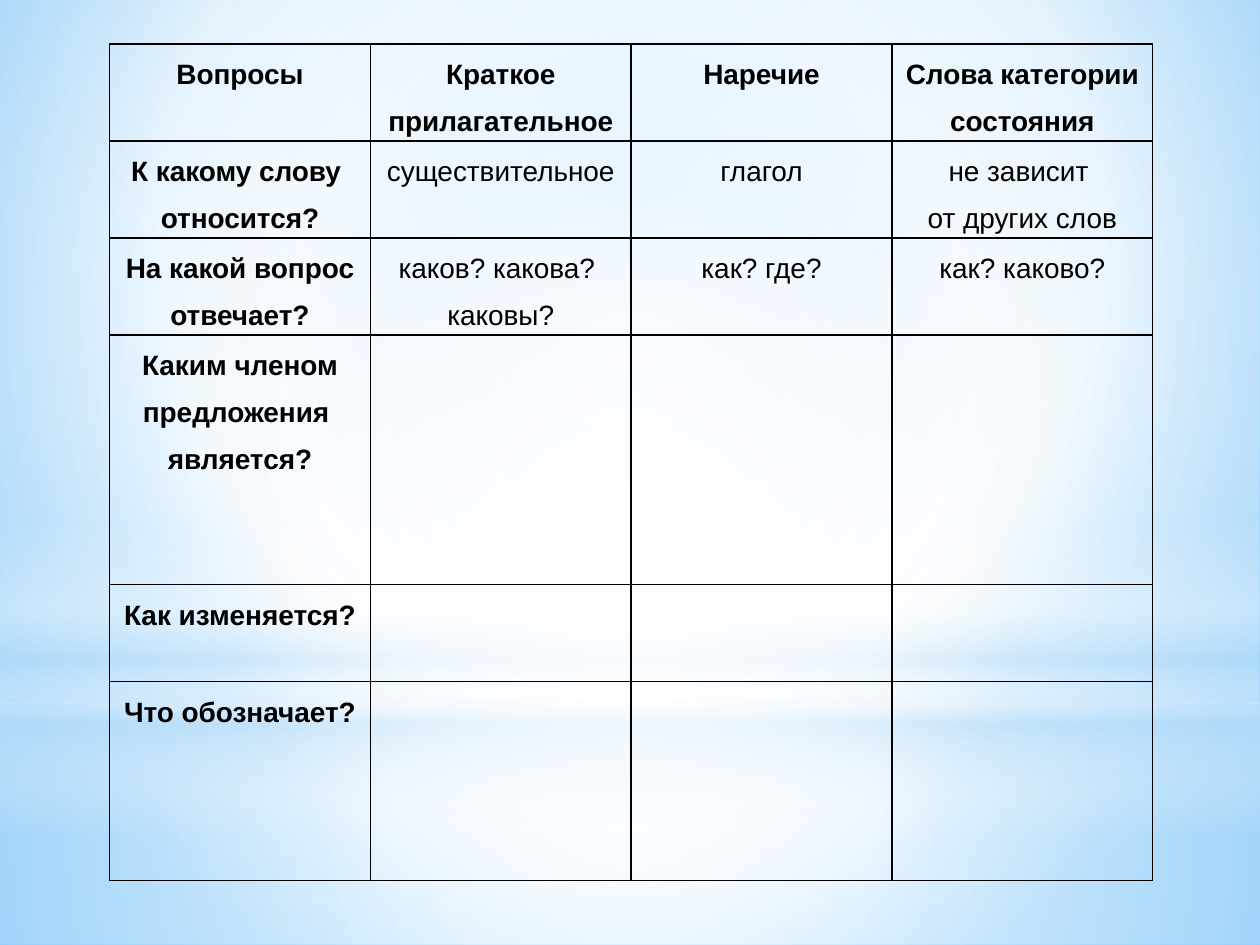
from lxml import etree
from pptx import Presentation
from pptx.dml.color import RGBColor
from pptx.enum.shapes import MSO_SHAPE
from pptx.enum.text import PP_ALIGN
from pptx.oxml.ns import qn
from pptx.util import Inches, Pt

COLORS = {
    "text": "000000", "border": "000000", "white": "FFFFFF",
    "pale": "B4DCFA", "sky": "9ED5FF", "blue": "5BB9FF",
}
CENTER = (50, 50, 50, 50)

# Gradient stops: position %, colour, opacity %
BACKGROUND = [(0, "sky", 100), (60, "white", 100), (100, "blue", 100)]
# Shape, box, stops, focus rectangle (None for a vertical linear gradient)
GLOWS = [
    (MSO_SHAPE.RECTANGLE, (0, 5.58, 10, 1.92),
     [(0, "white", 91), (37, "white", 76), (100, "pale", 79)], CENTER),
    (MSO_SHAPE.RECTANGLE, (0, 0, 10, 5.58),
     [(0, "white", 89), (48, "white", 62), (100, "pale", 79)], CENTER),
    (MSO_SHAPE.RECTANGLE, (0, 4.12, 10, 2.5),
     [(0, "white", 0), (29, "white", 30), (45, "pale", 40),
      (55, "white", 26), (65, "pale", 60), (100, "white", 0)], None),
    (MSO_SHAPE.OVAL, (0, 1.75, 10, 5.58),
     [(0, "white", 100), (56, "white", 0)], CENTER),
]

# Each cell is a list of paragraphs
ROWS = [
    [["Вопросы"], ["Краткое", "прилагательное"], ["Наречие"],
     ["Слова категории состояния"]],
    [["К какому слову ", "относится?"], ["существительное"], ["глагол"],
     ["не зависит ", "от других слов"]],
    [["На какой вопрос отвечает?"], ["каков? какова? ", "каковы?"],
     ["как? где?"], ["как? каково?"]],
    [["Каким членом предложения ", "является?"], [], [], []],
    [["Как изменяется?"], [], [], []],
    [["Что обозначает?"], [], [], []],
]
ROW_HEIGHTS = [0.77, 0.77, 0.77, 1.98, 0.77, 1.58]
COL_WIDTH = 2.07
TABLE_LEFT, TABLE_TOP = 0.87, 0.35


def set_gradient(fill, stops, focus):
    """Replace the stops and direction of a fill with the given gradient."""
    fill.gradient()
    grad = fill._fill._gradFill
    for child in list(grad):
        grad.remove(child)
    gs_list = etree.SubElement(grad, qn("a:gsLst"))
    for pos, color, opacity in stops:
        gs = etree.SubElement(gs_list, qn("a:gs"), pos=str(pos * 1000))
        clr = etree.SubElement(gs, qn("a:srgbClr"), val=COLORS[color])
        if opacity < 100:
            etree.SubElement(clr, qn("a:alpha"), val=str(opacity * 1000))
    if focus is None:
        etree.SubElement(grad, qn("a:lin"), ang="5400000", scaled="0")
        return
    shade = etree.SubElement(grad, qn("a:path"), path="circle")
    rect = {side: str(v * 1000) for side, v in zip("ltrb", focus)}
    etree.SubElement(shade, qn("a:fillToRect"), **rect)


def set_borders(cell):
    tc_pr = cell._tc.get_or_add_tcPr()
    for i, side in enumerate(("lnL", "lnR", "lnT", "lnB")):
        ln = etree.Element(qn(f"a:{side}"), w=str(Pt(1)))
        solid = etree.SubElement(ln, qn("a:solidFill"))
        etree.SubElement(solid, qn("a:srgbClr"), val=COLORS["border"])
        tc_pr.insert(i, ln)


def fill_cell(cell, paragraphs, bold):
    cell.margin_left = cell.margin_right = Inches(0.06)
    cell.margin_top = cell.margin_bottom = 0
    cell.fill.background()
    set_borders(cell)
    tf = cell.text_frame
    for i, text in enumerate(paragraphs):
        p = tf.add_paragraph() if i else tf.paragraphs[0]
        p.alignment = PP_ALIGN.CENTER
        p.line_spacing = 1.5
        r = p.add_run()
        r.text = text
        r.font.name = "Arial"
        r.font.size = Pt(16)
        r.font.bold = bold
        r.font.color.rgb = RGBColor.from_string(COLORS["text"])


def add_question_table(s):
    n_cols = len(ROWS[0])
    table = s.shapes.add_table(
        len(ROWS), n_cols, Inches(TABLE_LEFT), Inches(TABLE_TOP),
        Inches(COL_WIDTH * n_cols), Inches(sum(ROW_HEIGHTS))).table
    table.first_row = table.horz_banding = False
    for col in table.columns:
        col.width = Inches(COL_WIDTH)
    for i, (row, height) in enumerate(zip(ROWS, ROW_HEIGHTS)):
        table.rows[i].height = Inches(height)
        for j, paragraphs in enumerate(row):
            fill_cell(table.cell(i, j), paragraphs, bold=i == 0 or j == 0)


def main():
    prs = Presentation()
    prs.slide_width, prs.slide_height = Inches(10), Inches(7.5)
    s = prs.slides.add_slide(prs.slide_layouts[6])
    set_gradient(s.background.fill, BACKGROUND, (20, 10, 20, 60))
    for kind, box, stops, focus in GLOWS:
        glow = s.shapes.add_shape(kind, *map(Inches, box))
        glow.shadow.inherit = False
        glow.line.fill.background()
        set_gradient(glow.fill, stops, focus)
    add_question_table(s)
    prs.save("out.pptx")


if __name__ == "__main__":
    main()
